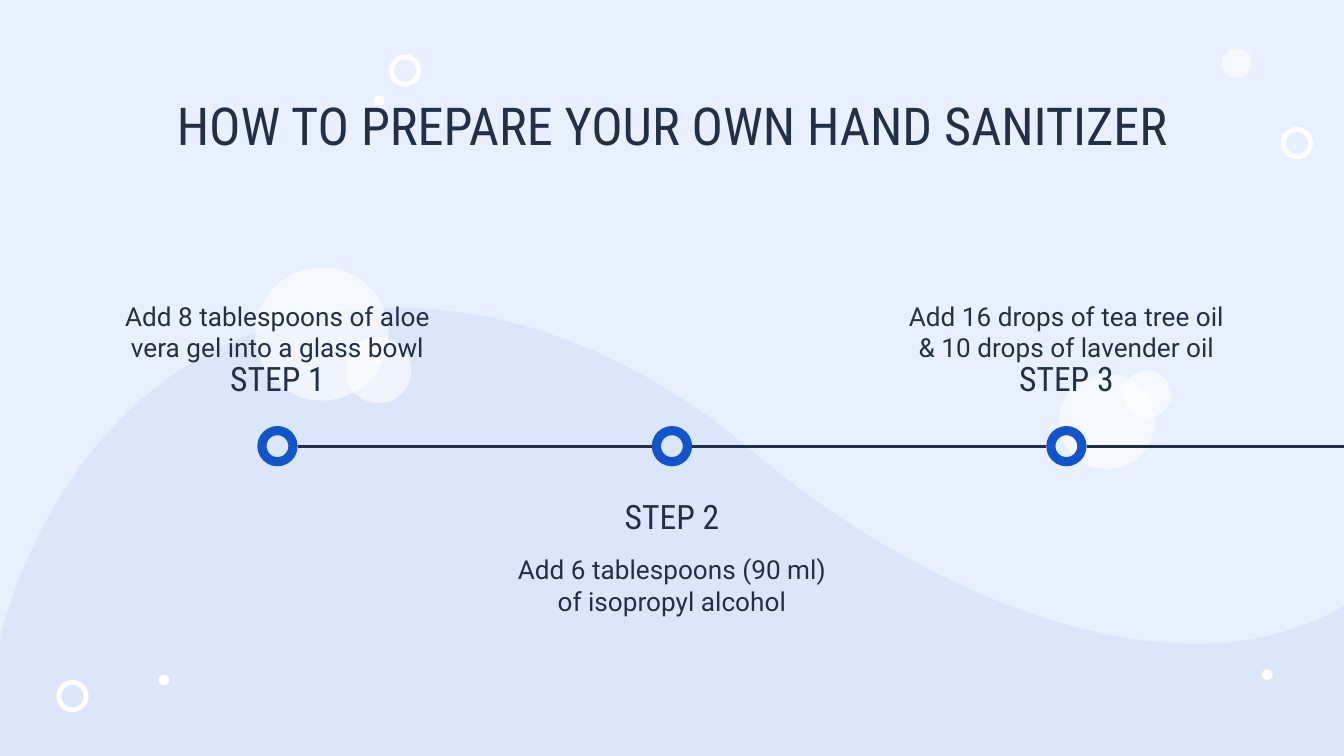
from dataclasses import dataclass

from lxml import etree
from pptx import Presentation
from pptx.dml.color import RGBColor
from pptx.enum.shapes import MSO_CONNECTOR, MSO_SHAPE
from pptx.enum.text import MSO_ANCHOR, MSO_AUTO_SIZE, PP_ALIGN
from pptx.oxml.ns import qn
from pptx.util import Inches, Pt

CENTER = PP_ALIGN.CENTER
TOP, MIDDLE, BOTTOM = MSO_ANCHOR.TOP, MSO_ANCHOR.MIDDLE, MSO_ANCHOR.BOTTOM
OVAL, DONUT = MSO_SHAPE.OVAL, MSO_SHAPE.DONUT
STRAIGHT = MSO_CONNECTOR.STRAIGHT
TITLE_ONLY = 5
COLUMNS = 100  # square grid cells across the slide; rows have the same size

# Centre column, centre row and diameter, in grid cells
BUBBLES = [
    (92, 4.7, 2.2), (23.95, 24.85, 9.9), (28.15, 27.55, 4.9),
    (82.35, 31.35, 7.1), (85.35, 29.35, 3.5),
]
DOTS = [(12.2, 50.6, 0.8), (94.3, 50.2, 0.8), (28.2, 7.5, 0.8)]
RINGS = [(5.4, 51.8, 2.4), (30.15, 5.25, 2.4), (96.5, 10.65, 2.4)]

# Each curve continues from the end of the one before it
WAVE_START = (29.5, 22.9)
WAVE_LEFT = [
    [(25.2, 22.9), (21, 23.7), (17.1, 25.5)],
    [(3.4, 31.6), (0, 47.5), (0, 47.5)],
]
WAVE_CORNERS = [(0, 56.25), (100, 56.25), (100, 45.1)]
WAVE_RIGHT = [
    [(96.7, 47), (93, 47.9), (89, 47.9)],
    [(78, 47.9), (65.3, 41.5), (55.9, 33.5)],
    [(47.7, 26.6), (38.5, 22.9), (29.5, 22.9)],
]

TITLE = "HOW TO PREPARE YOUR OWN HAND SANITIZER"
STEPS = [
    ("STEP 1", "Add 8 tablespoons of aloe vera gel into a glass bowl"),
    ("STEP 2", "Add 6 tablespoons (90 ml) of isopropyl alcohol"),
    ("STEP 3", "Add 16 drops of tea tree oil & 10 drops of lavender oil"),
]
TIMELINE_ROW = 33.2
STEP_GAP = 29.35
MARKER_SIZE = 3
LABEL_WIDTH = 25.6


@dataclass(frozen=True)
class Theme:
    background: str = "E8F0FF"
    wave: str = "DBE6FA"
    bubble: str = "FFFFFF"
    marker: str = "1155CC"
    ink: str = "223047"
    heading_font: str = "Roboto Condensed"
    body_font: str = "Roboto"
    title_size: int = 28
    step_size: int = 18
    body_size: int = 14


def write_text(shape, text, *, font, size, color, anchor=TOP, space_after=0):
    frame = shape.text_frame
    frame.text = text
    frame.word_wrap = True
    frame.auto_size = MSO_AUTO_SIZE.NONE
    frame.vertical_anchor = anchor
    frame.margin_left = frame.margin_right = Inches(0.1)
    frame.margin_top = frame.margin_bottom = Inches(0.1)
    paragraph = frame.paragraphs[0]
    paragraph.alignment = CENTER
    paragraph.space_after = Pt(space_after)
    run_font = paragraph.runs[0].font
    run_font.name = font
    run_font.size = Pt(size)
    run_font.color.rgb = RGBColor.from_string(color)


def bezier_points(start, curves, steps=32):
    """Return points along a chain of cubic curves, without the start."""
    points = []
    for first, second, end in curves:
        for step in range(1, steps + 1):
            t = step / steps
            weights = ((1 - t) ** 3, 3 * t * (1 - t) ** 2,
                       3 * t * t * (1 - t), t ** 3)
            corners = (start, first, second, end)
            points.append(tuple(
                sum(weight * corner[axis]
                    for weight, corner in zip(weights, corners))
                for axis in (0, 1)))
        start = end
    return points


class SlideBuilder:
    def __init__(self, presentation, theme):
        self.theme = theme
        self.cell = presentation.slide_width / COLUMNS
        layout = presentation.slide_layouts[TITLE_ONLY]
        self.slide = presentation.slides.add_slide(layout)
        fill = self.slide.background.fill
        fill.solid()
        fill.fore_color.rgb = RGBColor.from_string(theme.background)

    def lengths(self, *cells):
        return [round(cell * self.cell) for cell in cells]

    def paint(self, shape, color, opacity=100):
        shape.shadow.inherit = False
        shape.fill.solid()
        shape.fill.fore_color.rgb = RGBColor.from_string(color)
        shape.line.fill.background()
        if opacity < 100:
            color_node = shape.element.spPr.find(".//" + qn("a:srgbClr"))
            etree.SubElement(color_node, qn("a:alpha"), val=str(opacity * 1000))

    def wave(self):
        points = (bezier_points(WAVE_START, WAVE_LEFT) + WAVE_CORNERS
                  + bezier_points(WAVE_CORNERS[-1], WAVE_RIGHT))
        builder = self.slide.shapes.build_freeform(*self.lengths(*WAVE_START))
        builder.add_line_segments([self.lengths(*point) for point in points])
        self.paint(builder.convert_to_shape(), self.theme.wave)

    def circle(self, column, row, size, color, opacity=100, ring=None):
        """Add a disc, or a ring whose thickness is a share of its size."""
        box = self.lengths(column - size / 2, row - size / 2, size, size)
        shape = self.slide.shapes.add_shape(DONUT if ring else OVAL, *box)
        if ring:
            shape.adjustments[0] = ring
        self.paint(shape, color, opacity)

    def line(self, start, end, row):
        ends = self.lengths(start, row, end, row)
        connector = self.slide.shapes.add_connector(STRAIGHT, *ends)
        connector.line.color.rgb = RGBColor.from_string(self.theme.ink)
        connector.line.width = Pt(1.5)
        etree.SubElement(connector.element.spPr, qn("a:effectLst"))

    def label(self, center, top, height, text, **text_format):
        box = self.lengths(center - LABEL_WIDTH / 2, top, LABEL_WIDTH, height)
        shape = self.slide.shapes.add_textbox(*box)
        write_text(shape, text, color=self.theme.ink, **text_format)

    def step(self, center, heading, description, above):
        theme = self.theme
        body = dict(font=theme.body_font, size=theme.body_size, space_after=16)
        head = dict(font=theme.heading_font, size=theme.step_size)
        if above:
            self.label(center, 18.9, 9.1, description, anchor=BOTTOM, **body)
            self.label(center, 25.6, 4.4, heading, **head)
        else:
            self.label(center, 40.2, 6.3, description, **body)
            self.label(center, 36.2, 4.4, heading, anchor=MIDDLE, **head)

    def title(self, text):
        """Fill the title placeholder and bring it to the front."""
        theme = self.theme
        shape = self.slide.shapes.title
        shape.left, shape.top, shape.width, shape.height = self.lengths(
            7.85, 5.9, 84.3, 5.2)
        write_text(shape, text, font=theme.heading_font,
                   size=theme.title_size, color=theme.ink)
        shape.element.getparent().append(shape.element)


def main():
    presentation = Presentation()
    presentation.slide_width = Inches(10)
    presentation.slide_height = Inches(5.625)
    theme = Theme()
    builder = SlideBuilder(presentation, theme)

    builder.wave()
    for bubble in BUBBLES:
        builder.circle(*bubble, theme.bubble, opacity=60)
    for dot in DOTS:
        builder.circle(*dot, theme.bubble)
    for ring in RINGS:
        builder.circle(*ring, theme.bubble, ring=0.15)

    centers = [COLUMNS / 2 + (i - 1) * STEP_GAP for i in range(len(STEPS))]
    radius = MARKER_SIZE / 2
    line_ends = [center - radius for center in centers[1:]] + [COLUMNS]
    for i, (center, line_end) in enumerate(zip(centers, line_ends)):
        builder.circle(center, TIMELINE_ROW, MARKER_SIZE, theme.marker,
                       ring=0.229)
        builder.line(center + radius, line_end, TIMELINE_ROW)
        builder.step(center, *STEPS[i], above=i % 2 == 0)

    builder.title(TITLE)
    presentation.save("out.pptx")


if __name__ == "__main__":
    main()
